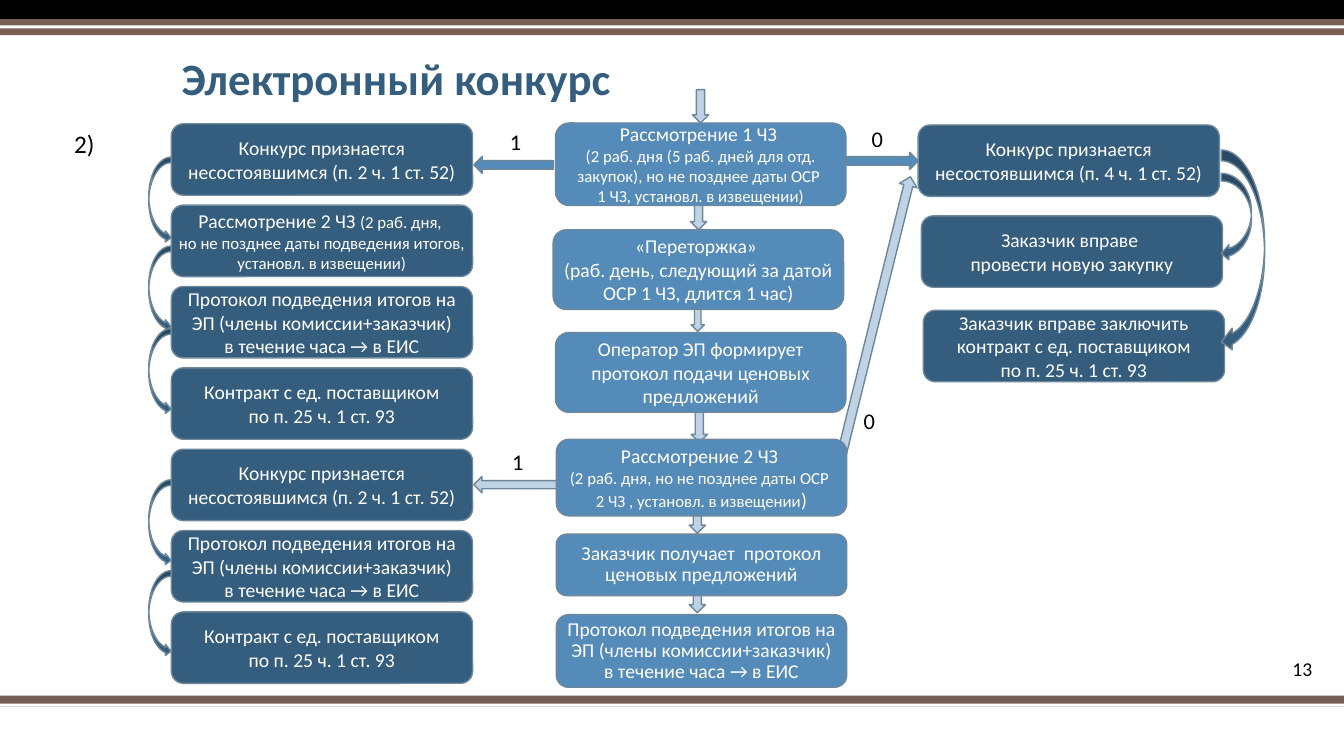
from pptx import Presentation
from pptx.dml.color import RGBColor
from pptx.enum.shapes import MSO_SHAPE
from pptx.enum.text import MSO_ANCHOR, PP_ALIGN
from pptx.util import Cm, Pt

NAVY, BLUE, PALE, OUTLINE = "355D7E", "558BB8", "BFD3E4", "6D879B"
BROWN, BLACK, WHITE = "775F55", "000000", "FFFFFF"


def add_figure(kind, x, y, w, h, fill, outline=OUTLINE):
    figure = slide.shapes.add_shape(kind, Cm(x), Cm(y), Cm(w), Cm(h))
    figure.shadow.inherit = False
    figure.fill.solid()
    figure.fill.fore_color.rgb = RGBColor.from_string(fill)
    if outline:
        figure.line.color.rgb = RGBColor.from_string(outline)
        figure.line.width = Pt(1)
    else:
        figure.line.fill.background()
    return figure


def style(paragraph, size, color, align):
    paragraph.alignment = align
    paragraph.font.name = "Calibri"
    paragraph.font.size = Pt(size)
    paragraph.font.color.rgb = RGBColor.from_string(color)


presentation = Presentation()
presentation.slide_width = Cm(33.87)
presentation.slide_height = Cm(19.05)
slide = presentation.slides.add_slide(presentation.slide_layouts[5])

bands = [
    (17.53, 0.28, BROWN), (17.73, 0.08, WHITE),
    (0, 0.48, BLACK), (0.48, 0.41, BROWN), (0.64, 0.08, WHITE),
]
for top, height, color in bands:
    add_figure(MSO_SHAPE.RECTANGLE, 0, top, 33.87, height, color, None)

title = slide.shapes.title
title.left, title.top, title.width, title.height = Cm(4.32), Cm(1.04), Cm(25.4), Cm(1.73)
title.text_frame.text = "Электронный конкурс"
title.text_frame.vertical_anchor = MSO_ANCHOR.BOTTOM
heading = title.text_frame.paragraphs[0]
style(heading, 32, NAVY, PP_ALIGN.LEFT)
heading.font.bold = True
heading.line_spacing = 0.9

straight_arrows = [
    (MSO_SHAPE.DOWN_ARROW, 17.45, 2.26, 0.41, 0.84, PALE),
    (MSO_SHAPE.DOWN_ARROW, 17.4, 4.95, 0.41, 0.84, PALE),
    (MSO_SHAPE.DOWN_ARROW, 17.42, 7.59, 0.33, 0.76, PALE),
    (MSO_SHAPE.DOWN_ARROW, 17.42, 10.31, 0.41, 0.84, PALE),
    (MSO_SHAPE.DOWN_ARROW, 17.37, 12.55, 0.41, 0.89, PALE),
    (MSO_SHAPE.DOWN_ARROW, 17.37, 14.78, 0.41, 0.66, PALE),
    (MSO_SHAPE.LEFT_ARROW, 11.94, 12.01, 2.77, 0.41, PALE),
    (MSO_SHAPE.LEFT_ARROW, 11.94, 3.94, 2.01, 0.43, BLUE),
    (MSO_SHAPE.RIGHT_ARROW, 21.31, 3.84, 1.83, 0.43, BLUE),
]
for arrow in straight_arrows:
    add_figure(*arrow)
return_arrow = add_figure(MSO_SHAPE.LEFT_ARROW, 18.31, 7.85, 7.47, 0.46, PALE)
return_arrow.rotation = 103.9

failed_one_bid = [[("Конкурс признается несостоявшимся (п. 2 ч. 1 ст. 52)", 14)]]
failed_no_bids = [[("Конкурс признается несостоявшимся (п. 4 ч. 1 ст. 52)", 14)]]
final_protocol = [
    [("Протокол подведения итогов на ЭП (члены комиссии+заказчик)", 14)],
    [("в течение часа → в ЕИС", 14)],
]
sole_supplier = [[("Контракт с ед. поставщиком", 14)], [("по п. 25 ч. 1 ст. 93", 14)]]
second_parts_short = [
    [("Рассмотрение 2 ЧЗ ", 14), ("(2 раб. дня, ", 12)],
    [("но не позднее даты подведения итогов, установл. в извещении)", 12)],
]
first_parts = [[
    ("Рассмотрение 1 ЧЗ \n", 14),
    ("(2 раб. дня (5 раб. дней для отд. закупок), но не позднее даты ОСР \n"
     "1 ЧЗ, установл. в извещении)", 12),
]]
rebidding = [
    [("«Переторжка» ", 14)],
    [("(раб. день, следующий за датой ОСР 1 ЧЗ, длится 1 час)", 14)],
]
price_protocol = [[("Оператор ЭП формирует протокол подачи ценовых предложений", 14)]]
second_parts = [
    [("Рассмотрение 2 ЧЗ", 14), (" ", 12)],
    [("(2 раб. дня, но не позднее даты ОСР \n2 ЧЗ , установл. в извещении", 12), (")", 14)],
]
protocol_received = [[("Заказчик получает  протокол ценовых предложений", 14)]]
new_purchase = [[("Заказчик вправе ", 14)], [("провести новую закупку", 14)]]
direct_contract = [
    [("Заказчик вправе заключить контракт с ед. поставщиком", 14)],
    [("по п. 25 ч. 1 ст. 93", 14)],
]

left_column = [
    (failed_one_bid, 0.25), (second_parts_short, 0), (final_protocol, 0.25),
    (sole_supplier, 0.25), (failed_one_bid, 0.25), (final_protocol, 0.25),
    (sole_supplier, 0.25),
]
steps = [
    (4.32, 3.12 + 2.05 * row, 7.59, 1.8, NAVY, inset, 1, content)
    for row, (content, inset) in enumerate(left_column)
]
steps += [
    (14, 3.1, 7.32, 2.08, BLUE, 0.1, 1, first_parts),
    (13.94, 5.79, 7.32, 2.01, BLUE, 0.1, 1, rebidding),
    (14, 8.38, 7.32, 2.01, BLUE, 0.25, 1, price_protocol),
    (14.02, 11.07, 7.32, 1.93, BLUE, 0.1, 1, second_parts),
    (14.02, 13.46, 7.32, 1.55, BLUE, 0.1, 0.9, protocol_received),
    (14.02, 15.49, 7.32, 1.83, BLUE, 0, 0.9, final_protocol),
    (23.14, 3.15, 7.59, 1.8, NAVY, 0.25, 1, failed_no_bids),
    (23.22, 5.44, 7.59, 1.8, NAVY, 0.25, 1, new_purchase),
    (23.27, 7.82, 7.59, 1.8, NAVY, 0.25, 1, direct_contract),
]
for x, y, w, h, color, inset, spacing, content in steps:
    frame = add_figure(MSO_SHAPE.ROUNDED_RECTANGLE, x, y, w, h, color).text_frame
    frame.word_wrap = True
    frame.vertical_anchor = MSO_ANCHOR.MIDDLE
    frame.margin_left = frame.margin_right = Cm(inset)
    for index, parts in enumerate(content):
        paragraph = frame.add_paragraph() if index else frame.paragraphs[0]
        style(paragraph, parts[0][1], WHITE, PP_ALIGN.CENTER)
        paragraph.line_spacing = spacing
        for text, size in parts:
            for line_index, line in enumerate(text.split("\n")):
                if line_index:
                    paragraph.add_line_break()
                if line:
                    run = paragraph.add_run()
                    run.text = line
                    if len(parts) > 1:
                        run.font.size = Pt(size)

for top in (3.96, 6.2, 8.28, 12.09, 14.38):
    add_figure(MSO_SHAPE.CURVED_RIGHT_ARROW, 3.75, top, 0.56, 2.17, NAVY)
for top, width, height in ((4.37, 0.76, 2.21), (3.78, 1.09, 5.11)):
    add_figure(MSO_SHAPE.CURVED_LEFT_ARROW, 30.78, top, width, height, NAVY)

labels = [
    ("0", 21.11, 10.13, 1.6, 0.94, 16, PP_ALIGN.CENTER),
    ("1", 12.19, 3.1, 1.6, 0.94, 16, PP_ALIGN.CENTER),
    ("0", 21.31, 3.02, 1.6, 0.94, 16, PP_ALIGN.CENTER),
    ("1", 12.25, 11.15, 1.6, 0.94, 16, PP_ALIGN.CENTER),
    ("2)", 1.12, 3.1, 2.01, 1.02, 18, PP_ALIGN.CENTER),
    ("13", 30.73, 16.54, 2.59, 0.64, 14, PP_ALIGN.RIGHT),
]
for text, x, y, w, h, size, align in labels:
    label = slide.shapes.add_textbox(Cm(x), Cm(y), Cm(w), Cm(h)).text_frame
    label.word_wrap = True
    label.vertical_anchor = MSO_ANCHOR.MIDDLE
    label.text = text
    style(label.paragraphs[0], size, BLACK, align)

presentation.save("out.pptx")
